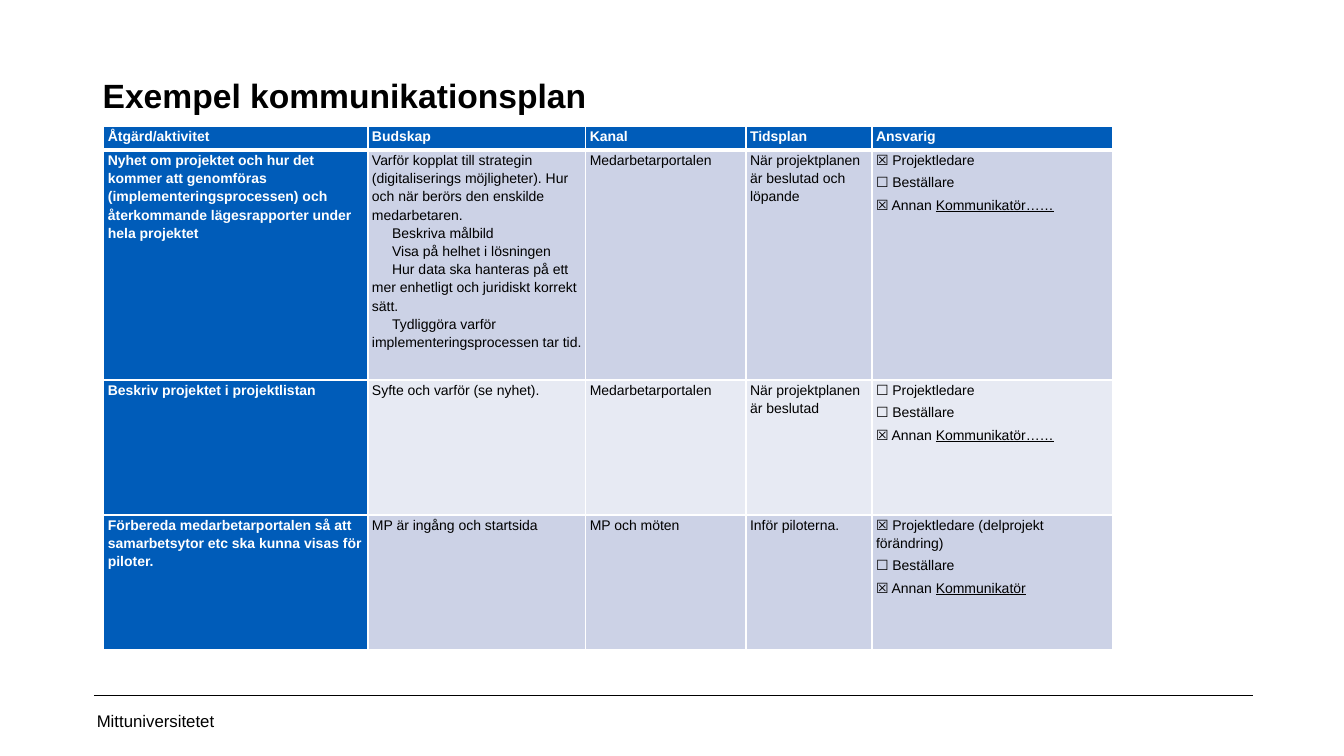
from lxml import etree
from pptx import Presentation
from pptx.dml.color import RGBColor
from pptx.enum.shapes import MSO_CONNECTOR
from pptx.enum.text import MSO_ANCHOR
from pptx.oxml.ns import qn
from pptx.util import Inches, Pt

LINE = MSO_CONNECTOR.STRAIGHT
MIDDLE = MSO_ANCHOR.MIDDLE

THEME = {
    "font": "Arial", "title": 24, "foot": 12, "cell": 10,
    "ink": "000000", "white": "FFFFFF", "blue": "005CB9",
    "bands": ["CCD2E6", "E7EAF3"],
}

deck = Presentation()
deck.slide_width, deck.slide_height = Inches(13.33), Inches(7.5)
slide = deck.slides.add_slide(deck.slide_layouts[6])


def style(run, size, color="ink", bold=False):
    font = run.font
    font.name, font.size, font.bold = THEME["font"], Pt(THEME[size]), bold
    font.color.rgb = RGBColor.from_string(THEME[color])


def edge(cell, side, width):
    line = etree.SubElement(cell._tc.get_or_add_tcPr(), qn("a:" + side), w=str(Pt(width)))
    fill = etree.SubElement(line, qn("a:solidFill"))
    etree.SubElement(fill, qn("a:srgbClr"), val=THEME["white"])


# Title and footer text
labels = [
    ("Exempel kommunikationsplan", (0.92, 0.54, 11.54, 0.71), 0.1, "title", True, 36),
    ("Mittuniversitetet", (0.92, 6.95, 3, 0.4), 0.04, "foot", False, None),
]
for text, place, inset, size, bold, pitch in labels:
    frame = slide.shapes.add_textbox(*map(Inches, place)).text_frame
    frame.text = text
    frame.word_wrap = True
    frame.vertical_anchor = MIDDLE
    frame.margin_left = Inches(inset)
    para = frame.paragraphs[0]
    if pitch:
        para.line_spacing = Pt(pitch)
    style(para.runs[0], size, bold=bold)

# Footer rule
rule = slide.shapes.add_connector(LINE, *map(Inches, (0.93, 6.9, 12.43, 6.9)))
rule.line.width = Pt(0.25)
rule.line.color.rgb = RGBColor.from_string(THEME["ink"])
etree.SubElement(rule._element.spPr, qn("a:effectLst"))

# Plan: each cell is a list of paragraphs
plan = [
    [["Åtgärd/aktivitet"], ["Budskap"], ["Kanal"], ["Tidsplan"], ["Ansvarig"]],
    [["Nyhet om projektet och hur det kommer att genomföras "
      "(implementeringsprocessen) och återkommande lägesrapporter under hela projektet"],
     ["Varför kopplat till strategin (digitaliserings möjligheter). "
      "Hur och när berörs den enskilde medarbetaren.",
      "Beskriva målbild",
      "Visa på helhet i lösningen",
      "Hur data ska hanteras på ett mer enhetligt och juridiskt korrekt sätt.",
      "Tydliggöra varför implementeringsprocessen tar tid."],
     ["Medarbetarportalen"],
     ["När projektplanen är beslutad och löpande"],
     ["☒ Projektledare", "☐ Beställare", "☒ Annan Kommunikatör……"]],
    [["Beskriv projektet i projektlistan"],
     ["Syfte och varför (se nyhet)."],
     ["Medarbetarportalen"],
     ["När projektplanen är beslutad"],
     ["☐ Projektledare", "☐ Beställare", "☒ Annan Kommunikatör……"]],
    [["Förbereda medarbetarportalen så att samarbetsytor etc ska kunna visas för piloter."],
     ["MP är ingång och startsida"],
     ["MP och möten"],
     ["Inför piloterna."],
     ["☒ Projektledare (delprojekt förändring)", "☐ Beställare", "☒ Annan Kommunikatör"]],
]
widths = [2.62, 2.16, 1.59, 1.25, 2.39]
heights = [0.24, 2.28, 1.34, 1.34]
OWNER = 4

# Table grid
table = slide.shapes.add_table(
    len(heights), len(widths), Inches(1.03), Inches(1.25),
    Inches(sum(widths)), Inches(sum(heights))).table
table.first_row = table.horz_banding = False
for col, width in zip(table.columns, widths):
    col.width = Inches(width)
for row, height in zip(table.rows, heights):
    row.height = Inches(height)

# Table cells
for r, row in enumerate(plan):
    for c, lines in enumerate(row):
        cell = table.cell(r, c)
        head = r == 0 or c == 0
        cell.margin_left = cell.margin_right = Inches(0.04)
        cell.margin_top = cell.margin_bottom = 0
        for side, width in (("lnL", 1), ("lnR", 1),
                            ("lnT", 3 if r == 1 else 1), ("lnB", 3 if r == 0 else 1)):
            edge(cell, side, width)
        cell.fill.solid()
        shade = THEME["blue"] if head else THEME["bands"][(r - 1) % 2]
        cell.fill.fore_color.rgb = RGBColor.from_string(shade)

        cell.text_frame.text = "\n".join(lines)
        for n, para in enumerate(cell.text_frame.paragraphs):
            para.line_spacing = Pt(13)
            para.space_before = Pt(3 if n and c == OWNER else 0)
            if n and c != OWNER:
                props = para._p.get_or_add_pPr()
                props.set("marL", "0")
                props.set("indent", str(Inches(0.2)))
            # The named owner is underlined
            lead, mark, name = para.text.partition("Annan ")
            if mark:
                para.text = lead + mark
                owner = para.add_run()
                owner.text = name
                owner.font.underline = True
            for run in para.runs:
                style(run, "cell", "white" if head else "ink", head)

deck.save("out.pptx")
